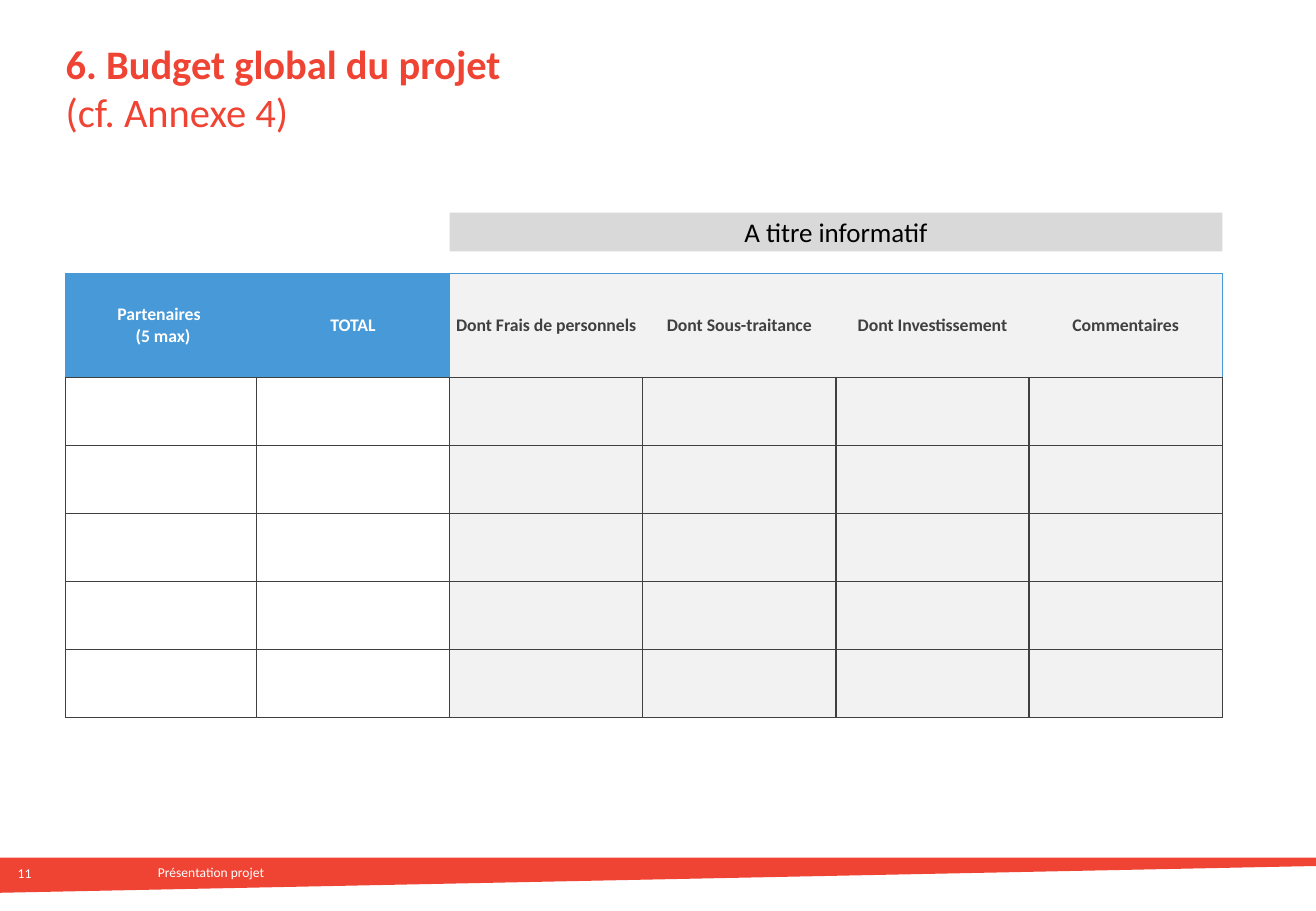
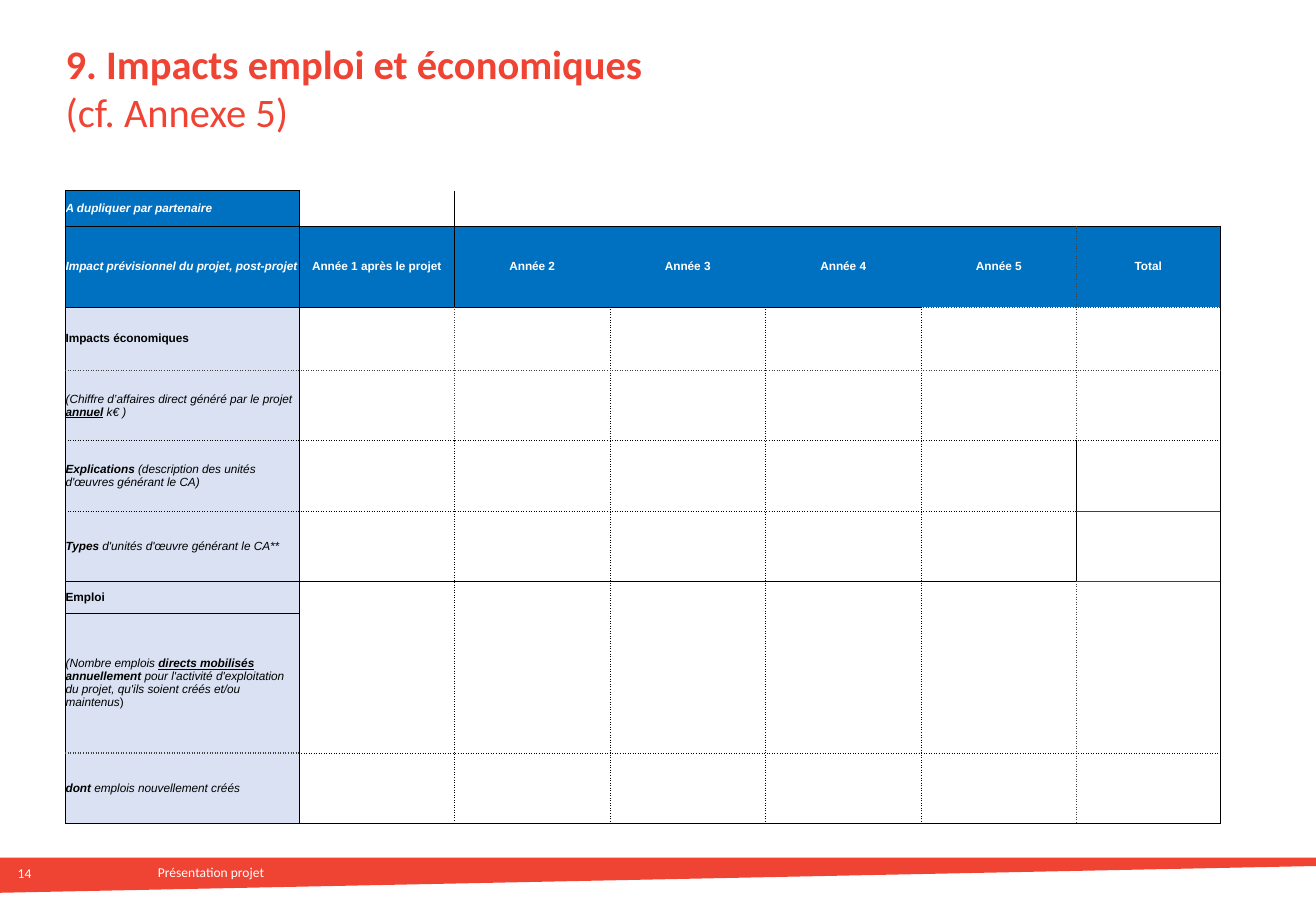
"""Build the project budget and project impact slides."""
from dataclasses import dataclass

from lxml.etree import SubElement
from pptx import Presentation
from pptx.dml.color import RGBColor
from pptx.enum.shapes import MSO_SHAPE
from pptx.enum.text import MSO_ANCHOR, MSO_AUTO_SIZE, PP_ALIGN
from pptx.oxml.ns import qn
from pptx.util import Inches, Pt


@dataclass(frozen=True)
class Theme:
    red: str = "EF4333"
    white: str = "FFFFFF"
    black: str = "000000"
    dark: str = "404040"
    silver: str = "D9D9D9"
    pale: str = "F2F2F2"
    sky: str = "4799D7"
    navy: str = "0070C0"
    ice: str = "D9E1F2"
    face: str = "Calibri"
    table_face: str = "Arial"
    title_size: float = 24
    banner_size: float = 16
    budget_size: float = 10.5
    impact_size: float = 7
    footer_size: float = 8
    plain_table: str = "{2D5ABB26-0587-4C30-8999-92F81FD0307C}"


THEME = Theme()
WIDTH, HEIGHT, MARGIN = 10.83, 7.5, 0.54
FILLS = {"b": THEME.sky, "f": THEME.pale, "n": THEME.navy, "l": THEME.ice, "w": THEME.white}
INKS = {"b": THEME.white, "f": THEME.dark, "n": THEME.white}
LINES = {
    "b": (THEME.sky, 0.75, "solid"),
    "k": (THEME.dark, 1, "solid"),
    "g": (THEME.dark, 1, "dot"),
    "y": (THEME.dark, 1, "sysDot"),
    "s": (THEME.black, 0.5, "solid"),
    "d": (THEME.black, 0.5, "dot"),
}


def write(paragraph, spans, size, colour, face=THEME.face, align=PP_ALIGN.LEFT):
    """Write (text, style) spans, where style letters are b, i and u."""
    paragraph.alignment = align
    paragraph.font.name = face
    paragraph.font.size = Pt(size)
    paragraph.font.color.rgb = RGBColor.from_string(colour)
    for text, style in spans:
        span = paragraph.add_run()
        span.text = text.rstrip("\n")
        span.font.bold = "b" in style
        span.font.italic = "i" in style
        span.font.underline = "u" in style
        if text.endswith("\n"):
            paragraph.add_line_break()


def draw_table(slide, top, columns, rows, fills, across, down, texts, size, face, first_align):
    """Draw a table whose fills and ruled lines are given by letter grids."""
    frame = slide.shapes.add_table(len(rows), len(columns), Inches(MARGIN), Inches(top),
                                   Inches(sum(columns)), Inches(sum(rows)))
    table = frame.table
    table.first_row = table.horz_banding = False
    frame._element.find(".//" + qn("a:tableStyleId")).text = THEME.plain_table
    for column, width in zip(table.columns, columns):
        column.width = Inches(width)
    for row, height in zip(table.rows, rows):
        row.height = Inches(height)
    for r in range(len(rows)):
        for c in range(len(columns)):
            cell = table.cell(r, c)
            cell.margin_left = cell.margin_right = cell.margin_top = cell.margin_bottom = 0
            cell.vertical_anchor = MSO_ANCHOR.MIDDLE
            edges = {"lnL": down[r][c], "lnR": down[r][c + 1],
                     "lnT": across[r][c], "lnB": across[r + 1][c]}
            for tag, letter in edges.items():
                if letter in LINES:
                    colour, weight, dash = LINES[letter]
                    line = SubElement(cell._tc.get_or_add_tcPr(), qn("a:" + tag), w=str(Pt(weight)))
                    SubElement(SubElement(line, qn("a:solidFill")), qn("a:srgbClr"), val=colour)
                    SubElement(line, qn("a:prstDash"), val=dash)
            letter = fills[r][c]
            if letter in FILLS:
                cell.fill.solid()
                cell.fill.fore_color.rgb = RGBColor.from_string(FILLS[letter])
            else:
                cell.fill.background()
            write(cell.text_frame.paragraphs[0], texts.get((r, c), []), size,
                  INKS.get(letter, THEME.black), face, PP_ALIGN.CENTER if c else first_align)
    return table


deck = Presentation()
deck.slide_width, deck.slide_height = Inches(WIDTH), Inches(HEIGHT)

pages = []
for number, heading, annex in [
    ("11", "6. Budget global du projet\n", "(cf. Annexe 4)"),
    ("14", "9. Impacts emploi et économiques\n", "(cf. Annexe 5)"),
]:
    page = deck.slides.add_slide(deck.slide_layouts[5])
    pages.append(page)

    outline = page.shapes.build_freeform(0, Inches(7.06))
    outline.add_line_segments([(Inches(x), Inches(y)) for x, y in
                               [(WIDTH, 7.06), (WIDTH, 7.13), (0, 7.35)]])
    band = outline.convert_to_shape()
    band.shadow.inherit = False
    band.fill.solid()
    band.fill.fore_color.rgb = RGBColor.from_string(THEME.red)
    band.line.fill.background()

    for text, left, top, width, align in [
        ("Présentation projet", 1.3, 7.11, 0.88, PP_ALIGN.LEFT),
        (number, 0.06, 7.12, 0.2, PP_ALIGN.RIGHT),
    ]:
        box = page.shapes.add_textbox(Inches(left), Inches(top), Inches(width), Inches(0.13))
        frame = box.text_frame
        frame.margin_left = frame.margin_right = frame.margin_top = frame.margin_bottom = 0
        frame.word_wrap = False
        write(frame.paragraphs[0], [(text, "")], THEME.footer_size, THEME.white, align=align)

    title = page.shapes.title
    title.left, title.top = Inches(MARGIN), Inches(0.3)
    title.width, title.height = Inches(0.9 * WIDTH), Inches(0.84)
    frame = title.text_frame
    frame.margin_left = frame.margin_right = 0
    frame.vertical_anchor = MSO_ANCHOR.MIDDLE
    frame.auto_size = MSO_AUTO_SIZE.NONE
    write(frame.paragraphs[0], [(heading, "b"), (annex, "")], THEME.title_size, THEME.red)

budget_page, impact_page = pages

budget_columns = [1.57] + [1.59] * 5
budget_texts = {
    (0, column): [(label, "b")] for column, label in enumerate(
        ["", "TOTAL", "Dont Frais de personnels", "Dont Sous-traitance",
         "Dont Investissement", "Commentaires"]) if label
}
budget_texts[0, 0] = [("Partenaires \n", "b"), (" (5 max)", "b")]
draw_table(
    budget_page, 2.25, budget_columns, [0.86] + [0.56] * 5,
    fills=["bbffff"] + ["  ffff"] * 5,
    across=["bbbbbb"] + ["kkkkkk"] * 6,
    down=["b     b"] + ["kkkkkkk"] * 5,
    texts=budget_texts, size=THEME.budget_size, face=THEME.face, first_align=PP_ALIGN.CENTER,
)

banner = budget_page.shapes.add_shape(
    MSO_SHAPE.RECTANGLE, Inches(MARGIN + sum(budget_columns[:2])), Inches(1.75),
    Inches(sum(budget_columns[2:])), Inches(0.32))
banner.shadow.inherit = False
banner.fill.solid()
banner.fill.fore_color.rgb = RGBColor.from_string(THEME.silver)
banner.line.fill.background()
banner.text_frame.vertical_anchor = MSO_ANCHOR.MIDDLE
write(banner.text_frame.paragraphs[0], [("A titre informatif", "")],
      THEME.banner_size, THEME.black, align=PP_ALIGN.CENTER)

impact_texts = {
    (0, 0): [("A dupliquer par partenaire", "bi")],
    (1, 0): [("Impact prévisionnel du projet, post-projet", "bi")],
    (2, 0): [("Impacts économiques", "b")],
    (3, 0): [("(Chiffre d’affaires direct généré par le projet ", "i"), ("annuel", "biu"),
             (" ", "bi"), ("k€ )", "i")],
    (4, 0): [("Explications ", "bi"), ("(description des unités d'œuvres générant le CA)", "i")],
    (5, 0): [("Types ", "bi"), ("d'unités d'œuvre générant le CA**", "i")],
    (6, 0): [("Emploi", "b")],
    (7, 0): [("(Nombre emplois ", "i"), ("directs mobilisés", "biu"), (" annuellement ", "bi"),
             ("pour l'activité d'exploitation du projet, qu'ils soient créés et/ou maintenus", "i"),
             (")", "")],
    (8, 0): [("dont ", "bi"), ("emplois nouvellement créés", "i")],
}
for column, label in enumerate(
        ["Année 1 après le projet", "Année 2", "Année 3", "Année 4", "Année 5", "Total"], 1):
    impact_texts[1, column] = [(label, "b")]
impact_table = draw_table(
    impact_page, 1.57, [1.92] + [1.28] * 5 + [1.18, 0.59],
    [0.29, 0.67, 0.52] + [0.58] * 3 + [0.26, 1.15, 0.58],
    fills=["n       ", "nnnnnnn "] + ["lwwwwww "] * 7,
    across=["s       ", "sssssss ", "sssssyy ", "ggggggg ", "ddddddd ",
            "ddddddk ", "ssssssk ", " dddddd ", "gdddddd ", "sssssss "],
    down=["ss       ", "ss    gs "] + ["ssgdddgs "] * 2 + ["ssddddss "] * 2 + ["ssddddgs "] * 3,
    texts=impact_texts, size=THEME.impact_size, face=THEME.table_face, first_align=PP_ALIGN.LEFT,
)
for column in range(1, 7):
    impact_table.cell(6, column).merge(impact_table.cell(7, column))

deck.save("out.pptx")
